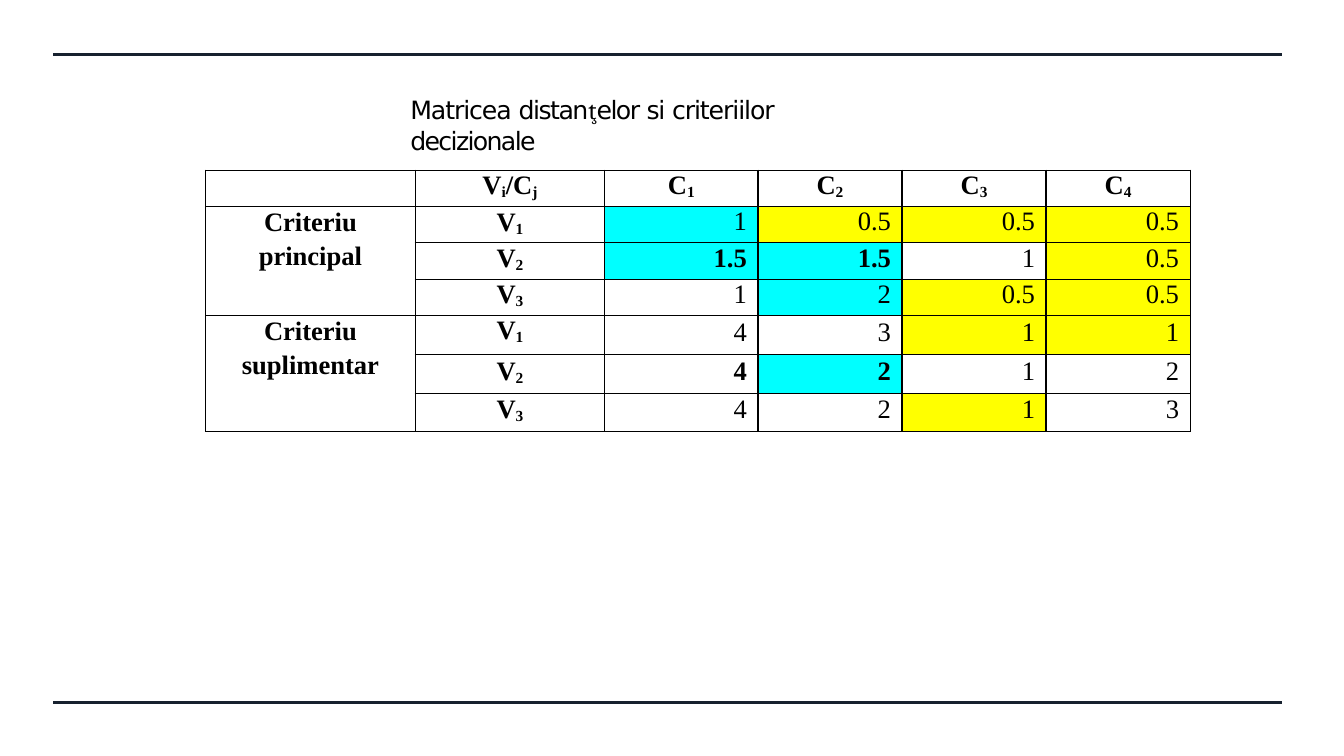
import pptx
import pptx.dml.color
import pptx.enum.shapes
import pptx.enum.text
import pptx.oxml
import pptx.oxml.ns
import pptx.util

ALIGN = pptx.enum.text.PP_ALIGN
INK = "000000"
FILLS = {"c": "00FFFF", "y": "FFFF00"}

TITLE = [("Matricea ", "DejaVu Sans", -0.8), ("distan", "DejaVu Sans", -1.1),
         ("ţ", "Cambria", -1.1), ("elor ", "DejaVu Sans", -1.1),
         ("si ", "DejaVu Sans", -1), ("criteriilor ", "DejaVu Sans", -0.8),
         ("decizionale", "DejaVu Sans", -1.2)]
HEADINGS = ["", "V|i|/C|j", "C|1", "C|2", "C|3", "C|4"]
CRITERIA = {1: "Criteriu\nprincipal", 4: "Criteriu\nsuplimentar"}
DISTANCES = [
    ("V|1", "1 0.5 0.5 0.5", "cyyy"),
    ("V|2", "*1.5 *1.5 1 0.5", "cc-y"),
    ("V|3", "1 2 0.5 0.5", "-cyy"),
    ("V|1", "4 3 1 1", "--yy"),
    ("V|2", "*4 *2 1 2", "-c--"),
    ("V|3", "4 2 1 3", "--y-"),
]
COLUMN_SHARES = [15.6, 14.1, 11.4, 10.72, 10.72, 10.72]
ROW_SHARES = [4.8, 4.8, 4.8, 4.8, 5.2, 5.1, 5.1]
LABEL_SPACING = [21.9, 21.9, 21.8, 21.8, 21.9, 22.8, 22.6]
VALUE_SPACING = [21.4, 21.4, 21.4, 21.4, 22.6, 22.4, 22.2]


def rgb(hex_colour):
    """Turn a hex string into a colour."""
    return pptx.dml.color.RGBColor.from_string(hex_colour)


class MatrixSlide:
    """Draw elements in one style, with lengths in percent of the slide."""

    def __init__(self, deck):
        """Add a title-only slide to the deck."""
        self.deck = deck
        self.slide = deck.slides.add_slide(deck.slide_layouts[5])
        self.font, self.size, self.rule_colour = "Times New Roman", 19, "17212F"

    def x(self, share):
        """Give a share of the slide's width."""
        return round(self.deck.slide_width * share / 100)

    def y(self, share):
        """Give a share of the slide's height."""
        return round(self.deck.slide_height * share / 100)

    def rule(self, left, right, height):
        """Draw a horizontal rule."""
        rule = self.slide.shapes.add_connector(
            pptx.enum.shapes.MSO_CONNECTOR.STRAIGHT,
            self.x(left), self.y(height), self.x(right), self.y(height))
        rule.line.color.rgb = rgb(self.rule_colour)
        rule.line.width = pptx.util.Pt(2.25)
        rule._element.spPr.append(pptx.oxml.parse_xml(
            f'<a:effectLst {pptx.oxml.ns.nsdecls("a")}/>'))

    def title(self, pieces, left, top, width, height):
        """Place the title and set its pieces."""
        title = self.slide.shapes.title
        title.left, title.top = self.x(left), self.y(top)
        title.width, title.height = self.x(width), self.y(height)
        frame = title.text_frame
        frame.word_wrap = True
        frame.auto_size = pptx.enum.text.MSO_AUTO_SIZE.SHAPE_TO_FIT_TEXT
        frame.vertical_anchor = pptx.enum.text.MSO_ANCHOR.TOP
        frame.margin_left = frame.margin_right = frame.margin_bottom = 0
        frame.margin_top = pptx.util.Inches(0.01)
        line = frame.paragraphs[0]
        line.alignment = ALIGN.LEFT
        line.space_before = pptx.util.Pt(1)
        line.font.size = pptx.util.Pt(18)
        line.font.color.rgb = rgb(INK)
        for words, font, spacing in pieces:
            run = line.add_run()
            run.text, run.font.name = words, font
            run._r.get_or_add_rPr().set("spc", str(round(spacing * 100)))

    def table(self, left, top, columns, rows):
        """Add a plain table with the given column and row shares."""
        table = self.slide.shapes.add_table(
            len(rows), len(columns), self.x(left), self.y(top),
            self.x(sum(columns)), self.y(sum(rows))).table
        table.first_row = table.horz_banding = False
        for column, share in zip(table.columns, columns):
            column.width = self.x(share)
        for row, share in zip(table.rows, rows):
            row.height = self.y(share)
        for cell in table.iter_cells():
            self.frame_cell(cell)
        return table

    def frame_cell(self, cell):
        """Give a cell thin borders, no margins and no fill."""
        cell.margin_left = cell.margin_right = 0
        cell.margin_top = cell.margin_bottom = 0
        for side in "LRTB":
            cell._tc.get_or_add_tcPr().append(pptx.oxml.parse_xml(
                f'<a:ln{side} {pptx.oxml.ns.nsdecls("a")} w="12700"><a:solidFill>'
                f'<a:srgbClr val="{INK}"/></a:solidFill></a:ln{side}>'))
        cell.fill.background()

    def label(self, cell, text, spacing, align=ALIGN.CENTER, bold=True):
        """Set lines in a cell, with subscripts between bars."""
        lines = text.split("\n")
        cell.text = "\n" * (len(lines) - 1)
        for index, (line, words) in enumerate(zip(cell.text_frame.paragraphs, lines)):
            line.alignment = align
            line.line_spacing = pptx.util.Pt(spacing)
            line.space_before = pptx.util.Pt(2.4 if index else 0)
            line.font.name, line.font.bold = self.font, bold
            line.font.size = pptx.util.Pt(self.size)
            line.font.color.rgb = rgb(INK)
            for place, piece in enumerate(words.split("|")):
                if piece:
                    run = line.add_run()
                    run.text = piece
                    if place % 2:
                        run._r.get_or_add_rPr().set("baseline", "-11000")

    def value(self, cell, text, fill, spacing, bold_spacing):
        """Set a right-aligned distance and colour its cell."""
        bold = text.startswith("*")
        cell.margin_right = pptx.util.Inches(0.11)
        self.label(cell, text.lstrip("*"), bold_spacing if bold else spacing,
                   ALIGN.RIGHT, bold)
        if fill in FILLS:
            cell.fill.solid()
            cell.fill.fore_color.rgb = rgb(FILLS[fill])


def main():
    """Build the distance matrix slide."""
    deck = pptx.Presentation()
    deck.slide_width = pptx.util.Inches(13.33)
    deck.slide_height = pptx.util.Inches(7.5)
    page = MatrixSlide(deck)
    for height in (7.2, 92.93):
        page.rule(3.98, 95.42, height)
    page.title(TITLE, 30.53, 12.4, 35.86, 4.4)

    matrix = page.table(15.3, 22.53, COLUMN_SHARES, ROW_SHARES)
    for column, heading in enumerate(HEADINGS):
        if heading:
            page.label(matrix.cell(0, column), heading, LABEL_SPACING[0])
    for row, criterion in CRITERIA.items():
        matrix.cell(row, 0).merge(matrix.cell(row + 2, 0))
        page.label(matrix.cell(row, 0), criterion, LABEL_SPACING[row])
    for row, (variant, distances, fills) in enumerate(DISTANCES, 1):
        page.label(matrix.cell(row, 1), variant, LABEL_SPACING[row])
        for column, (distance, fill) in enumerate(zip(distances.split(), fills), 2):
            page.value(matrix.cell(row, column), distance, fill,
                       VALUE_SPACING[row], LABEL_SPACING[row])
    deck.save("out.pptx")


if __name__ == "__main__":
    main()
